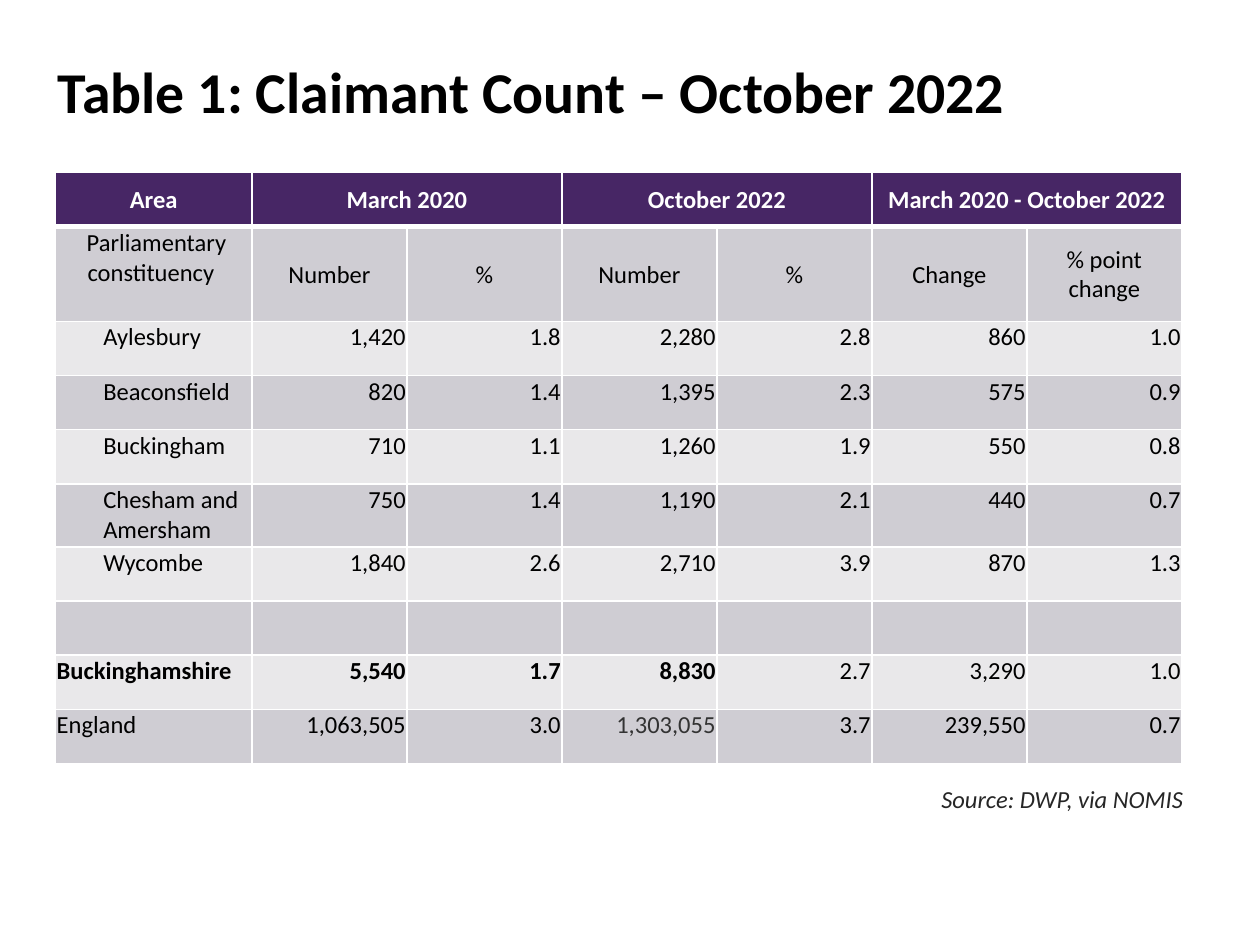
from lxml import etree
from pptx import Presentation, util as u
from pptx.dml.color import RGBColor
from pptx.enum import text
from pptx.oxml import ns

BLACK = RGBColor(0x00, 0x00, 0x00)
WHITE = RGBColor(0xFF, 0xFF, 0xFF)
PURPLE = RGBColor(0x47, 0x26, 0x65)
BAND_DARK = RGBColor(0xCF, 0xCD, 0xD3)
BAND_LIGHT = RGBColor(0xE9, 0xE8, 0xEA)
GREY = RGBColor(0x33, 0x33, 0x33)
SOURCE_GREY = RGBColor(0x26, 0x26, 0x26)
LEFT, CENTER, RIGHT = text.PP_ALIGN.LEFT, text.PP_ALIGN.CENTER, text.PP_ALIGN.RIGHT


def format_paragraph(paragraph, align, color, size=14, bold=False, italic=False):
    paragraph.alignment = align
    font = paragraph.font
    font.name, font.size = "Calibri", u.Pt(size)
    font.bold, font.italic = bold, italic
    font.color.rgb = color


def add_borders(cell, bottom_width):
    """Draw white lines on all four sides; must run before the cell is filled."""
    properties = cell._tc.get_or_add_tcPr()
    for side, width in (("L", 1), ("R", 1), ("T", 1), ("B", bottom_width)):
        line = etree.SubElement(properties, ns.qn(f"a:ln{side}"), w=str(u.Pt(width)))
        fill = etree.SubElement(line, ns.qn("a:solidFill"))
        etree.SubElement(fill, ns.qn("a:srgbClr"), val=str(WHITE))


deck = Presentation()
deck.slide_width, deck.slide_height = u.Inches(10), u.Inches(7.5)
slide = deck.slides.add_slide(deck.slide_layouts[5])

title = slide.shapes.title
title.left, title.top = u.Inches(0.36), u.Inches(0.24)
title.width, title.height = u.Inches(8.62), u.Inches(1.02)
title.text_frame.text = "Table 1: Claimant Count – October 2022"
title.text_frame.vertical_anchor = text.MSO_ANCHOR.MIDDLE
title.text_frame.paragraphs[0].line_spacing = 0.9
format_paragraph(title.text_frame.paragraphs[0], LEFT, BLACK, size=33, bold=True)

claimants = [
    ["Area", "March 2020", "", "October 2022", "", "March 2020 - October 2022", ""],
    ["\u00a0Parliamentary constituency ".replace("\u00a0", " "), "Number", "%",
     "Number", "%", "Change", "% point change"],
    ["Aylesbury", "1,420", "1.8", "2,280", "2.8", "860", "1.0"],
    ["Beaconsfield", "820", "1.4", "1,395", "2.3", "575", "0.9"],
    ["Buckingham", "710", "1.1", "1,260", "1.9", "550", "0.8"],
    ["Chesham and Amersham", "750", "1.4", "1,190", "2.1", "440", "0.7"],
    ["Wycombe", "1,840", "2.6", "2,710", "3.9", "870", "1.3"],
    [""] * 7,
    ["Buckinghamshire", "5,540", "1.7", "8,830", "2.7", "3,290", "1.0"],
    ["England", "1,063,505", "3.0", "1,303,055", "3.7", "239,550", "0.7"],
]
HEADER, SUBHEADER, COUNTY, ENGLAND = 0, 1, 8, 9
CONSTITUENCIES = range(2, 7)
row_heights = {SUBHEADER: 0.75, 5: 0.5}

table = slide.shapes.add_table(
    len(claimants), 7, u.Inches(0.44), u.Inches(1.37), u.Inches(8.95), u.Inches(4.7)).table
for c, column in enumerate(table.columns):
    column.width = u.Inches(1.56 if c == 0 else 1.23)
for r, row in enumerate(table.rows):
    row.height = u.Inches(row_heights.get(r, 0.43))
for c in (1, 3, 5):
    table.cell(HEADER, c).merge(table.cell(HEADER, c + 1))

for r, values in enumerate(claimants):
    for c, value in enumerate(values):
        cell = table.cell(r, c)
        add_borders(cell, 3 if r == HEADER else 1)
        cell.fill.solid()
        cell.fill.fore_color.rgb = PURPLE if r == HEADER else (BAND_LIGHT, BAND_DARK)[r % 2]
        indented = c == 0 and r in CONSTITUENCIES
        cell.margin_left = u.Inches(0.38 if indented else 0.01)
        cell.margin_right = cell.margin_top = u.Inches(0.01)
        cell.margin_bottom = 0
        centered = r <= SUBHEADER
        cell.vertical_anchor = (text.MSO_ANCHOR.MIDDLE if centered and (r, c) != (SUBHEADER, 0)
                                else text.MSO_ANCHOR.TOP)
        if cell.is_spanned:
            continue
        cell.text = value
        color = WHITE if r == HEADER else GREY if (r, c) == (ENGLAND, 3) else BLACK
        format_paragraph(cell.text_frame.paragraphs[0],
                         CENTER if centered else LEFT if c == 0 else RIGHT, color,
                         bold=r == HEADER or (r == COUNTY and c <= 3))

source = slide.shapes.add_textbox(
    u.Inches(7.11), u.Inches(6.17), u.Inches(2.38), u.Inches(0.34)).text_frame
source.word_wrap = True
source.auto_size = text.MSO_AUTO_SIZE.SHAPE_TO_FIT_TEXT
source.text = "Source: DWP, via NOMIS"
format_paragraph(source.paragraphs[0], RIGHT, SOURCE_GREY, italic=True)

deck.save("out.pptx")
